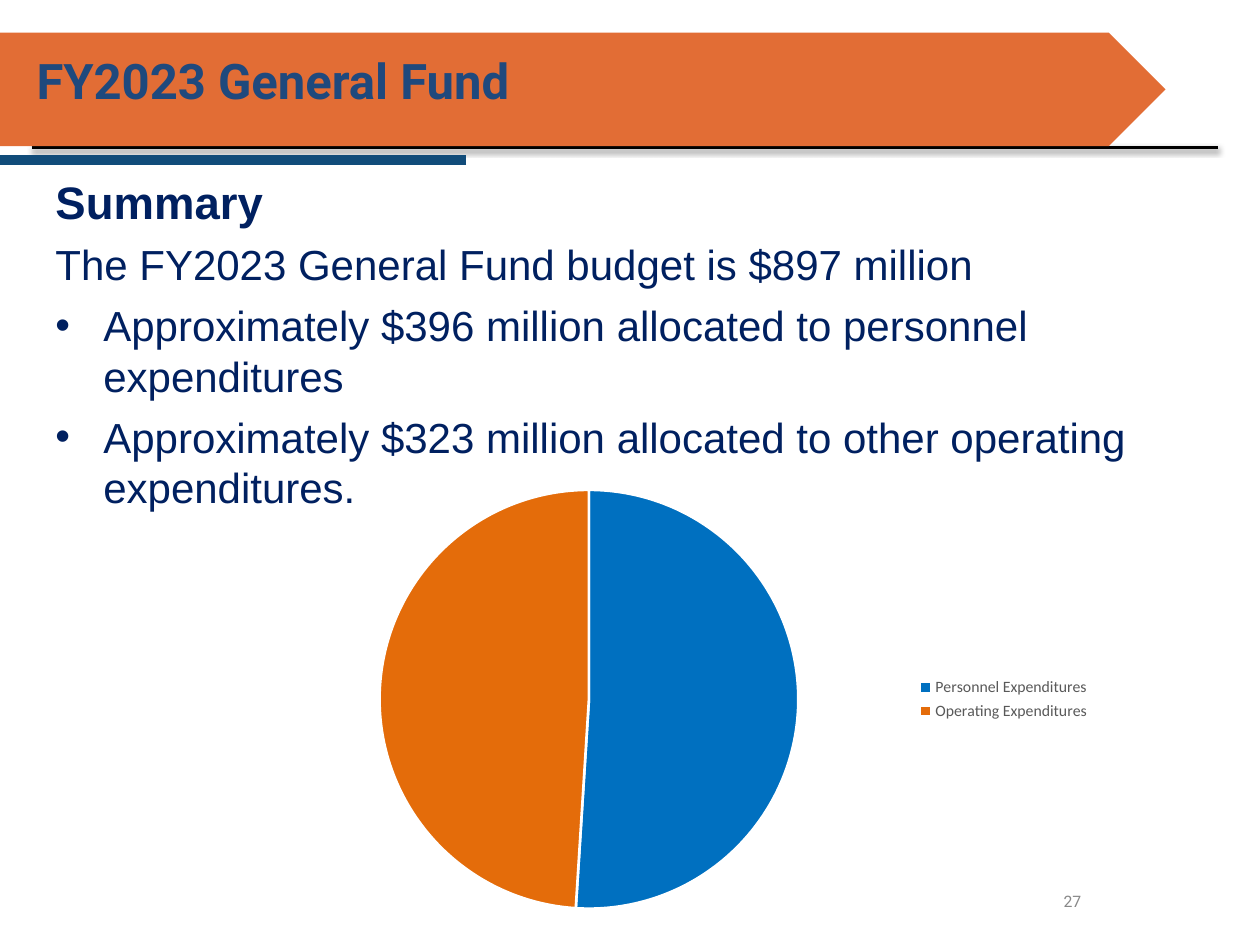
from lxml.etree import SubElement
from pptx import Presentation
from pptx.chart.data import CategoryChartData
from pptx.dml.color import RGBColor
from pptx.enum.chart import XL_CHART_TYPE as CHART, XL_LEGEND_POSITION as LEGEND
from pptx.enum.shapes import MSO_CONNECTOR as CONN, MSO_SHAPE as SHAPE
from pptx.enum.text import MSO_ANCHOR as ANCHOR, MSO_AUTO_SIZE as FIT, PP_ALIGN as ALIGN
from pptx.oxml.ns import qn
from pptx.util import Inches, Pt

NAVY, BLUE, ORANGE = "002060", "0070C0", "E46C0A"


def color(value):
    return RGBColor.from_string(value)


def box(*lengths):
    return [Inches(v) for v in lengths]


def style(font, name, size, value, bold=False):
    font.name, font.size, font.bold = name, Pt(size), bold
    font.color.rgb = color(value)


def add_run(p, text, *look):
    r = p.add_run()
    r.text = text
    style(r.font, *look)


def place(sp, *lengths):
    sp.left, sp.top, sp.width, sp.height = box(*lengths)
    tf = sp.text_frame
    tf.word_wrap, tf.auto_size = True, FIT.NONE
    return tf


def bring_forward(sp):
    sp.element.getparent().append(sp.element)


def add_rule(s, x1, x2, y, value, width, shadow=False):
    line = s.shapes.add_connector(CONN.STRAIGHT, *box(x1, y, x2, y))
    line.line.color.rgb = color(value)
    line.line.width = Pt(width)
    effects = SubElement(line.element.spPr, qn("a:effectLst"))
    if shadow:
        outer = SubElement(effects, qn("a:outerShdw"), blurRad=str(Pt(3.1)),
                           dist=str(Pt(1.6)), dir="5400000", rotWithShape="0")
        black = SubElement(outer, qn("a:srgbClr"), val="000000")
        SubElement(black, qn("a:alpha"), val="38000")


def add_banner(s):
    add_rule(s, 0.25, 9.67, 1.17, "000000", 2, shadow=True)
    add_rule(s, 3.7, -0.02, 1.27, "114C7A", 6)
    sp = s.shapes.add_shape(SHAPE.PENTAGON, *box(0, 0.26, 9.25, 0.9))
    sp.shadow.inherit = False
    sp.fill.solid()
    sp.fill.fore_color.rgb = color("E26D35")
    sp.line.fill.background()


def add_title(s, text):
    sp = s.shapes.title
    tf = place(sp, 0.19, 0.22, 9.67, 0.89)
    tf.vertical_anchor = ANCHOR.MIDDLE
    p = tf.paragraphs[0]
    p.alignment, p.line_spacing = ALIGN.LEFT, 0.9
    add_run(p, text, "Roboto", 28, "1F497D", True)
    bring_forward(sp)


def add_body(s, paragraphs):
    sp = s.placeholders[1]
    tf = place(sp, 0.34, 1.33, 9.31, 3.3)
    for i, (text, size, bold, bullet) in enumerate(paragraphs):
        p = tf.add_paragraph() if i else tf.paragraphs[0]
        p.alignment = ALIGN.LEFT if bullet else ALIGN.JUSTIFY
        p.space_before, p.space_after = Pt(3 if i else 0), Pt(3)
        pPr = p._p.get_or_add_pPr()
        indent = Inches(0.38) if bullet else 0
        pPr.set("marL", str(indent))
        pPr.set("indent", str(-indent))
        if bullet:
            SubElement(pPr, qn("a:buFont"), typeface="Arial")
            SubElement(pPr, qn("a:buChar"), char="•")
        else:
            SubElement(pPr, qn("a:buNone"))
        add_run(p, text, "Arial", size, NAVY, bold)
    bring_forward(sp)


def add_page_number(s, text):
    sp = s.shapes.add_textbox(*box(6.43, 6.95, 2.25, 0.4))
    tf = sp.text_frame
    tf.word_wrap, tf.vertical_anchor = True, ANCHOR.MIDDLE
    p = tf.paragraphs[0]
    p.alignment = ALIGN.RIGHT
    add_run(p, text, "Roboto", 9, "888888")


def add_pie(s, slices):
    data = CategoryChartData()
    data.categories = [name for name, _, _ in slices]
    data.add_series("Series 1", [value for _, value, _ in slices])
    chart = s.shapes.add_chart(CHART.PIE, *box(2.08, 3.75, 6.67, 3.6), data).chart
    style(chart.font, "Calibri", 10, "000000")
    chart.has_title = False
    chart.has_legend = True
    chart.legend.position = LEGEND.RIGHT
    chart.legend.include_in_layout = False
    style(chart.legend.font, "Calibri", 9, "595959")
    plot = chart.plots[0]
    plot.vary_by_categories = True
    for i, (_, _, value) in enumerate(slices):
        fmt = plot.series[0].points[i].format
        fmt.fill.solid()
        fmt.fill.fore_color.rgb = color(value)
        fmt.line.color.rgb = color("FFFFFF")
        fmt.line.width = Pt(1.5)


def main():
    prs = Presentation()
    prs.slide_width, prs.slide_height = box(10, 7.5)
    s = prs.slides.add_slide(prs.slide_layouts[1])
    add_banner(s)
    add_title(s, "FY2023 General Fund")
    add_page_number(s, "27")
    add_body(s, [
        ("Summary", 26, True, False),
        ("The FY2023 General Fund budget is $897 million", 24, False, False),
        ("Approximately $396 million allocated to personnel expenditures", 24, False, True),
        ("Approximately $323 million allocated to other operating expenditures.", 24, False, True),
    ])
    add_pie(s, [("Personnel Expenditures", 51, BLUE), ("Operating Expenditures", 49, ORANGE)])
    prs.save("out.pptx")


if __name__ == "__main__":
    main()
